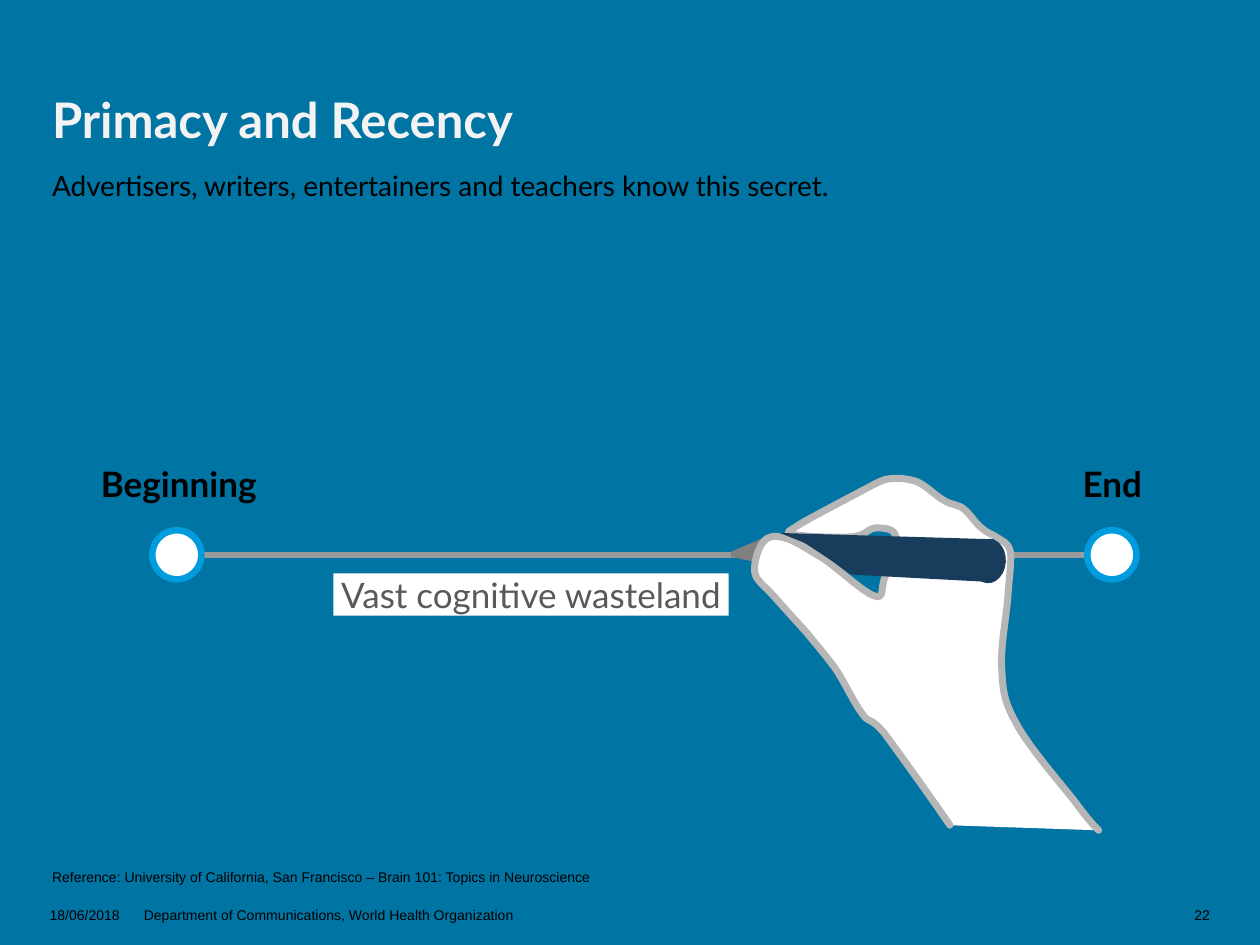
from lxml import etree
from pptx import Presentation
from pptx.dml.color import RGBColor
from pptx.enum.shapes import MSO_CONNECTOR, MSO_SHAPE
from pptx.enum.text import MSO_ANCHOR, PP_ALIGN
from pptx.oxml.ns import qn
from pptx.util import Cm, Pt

OVAL, RECT, STRAIGHT = MSO_SHAPE.OVAL, MSO_SHAPE.RECTANGLE, MSO_CONNECTOR.STRAIGHT
TOP, MIDDLE, BOTTOM = MSO_ANCHOR.TOP, MSO_ANCHOR.MIDDLE, MSO_ANCHOR.BOTTOM
LEFT, CENTER, RIGHT = PP_ALIGN.LEFT, PP_ALIGN.CENTER, PP_ALIGN.RIGHT

BLUE = RGBColor(0x00, 0x74, 0xA2)
SKY = RGBColor(0x00, 0x9C, 0xDE)
NAVY = RGBColor(0x18, 0x3C, 0x5C)
WHITE = RGBColor(0xFF, 0xFF, 0xFF)
PALE = RGBColor(0xF3, 0xF3, 0xF3)
BLACK = RGBColor(0x00, 0x00, 0x00)
TEXT_GREY = RGBColor(0x59, 0x59, 0x59)
TIP_GREY = RGBColor(0x80, 0x80, 0x80)
LINE_GREY = RGBColor(0x9B, 0x9B, 0x9B)
HAND_GREY = RGBColor(0xB6, 0xB6, 0xB6)

UNIT = Cm(0.0254)  # drawing unit of the hand and pen


def add_text(text, x, y, w, h, size=8, font="Arial", color=BLACK, bold=False,
             align=LEFT, anchor=TOP, margins=(0, 0, 0, 0), spacing=None,
             after=None, wrap=True, fill=None):
    box = Cm(x), Cm(y), Cm(w), Cm(h)
    if fill is None:
        sp = s.shapes.add_textbox(*box)
    else:
        sp = s.shapes.add_shape(RECT, *box)
        sp.shadow.inherit = False
        sp.fill.solid()
        sp.fill.fore_color.rgb = fill
        sp.line.fill.background()
    tf = sp.text_frame
    tf.word_wrap = wrap
    tf.vertical_anchor = anchor
    tf.margin_left, tf.margin_top, tf.margin_right, tf.margin_bottom = map(Cm, margins)
    p = tf.paragraphs[0]
    p.alignment = align
    p.line_spacing = spacing
    if after is not None:
        p.space_after = Pt(after)
    r = p.add_run()
    r.text = text
    r.font.size, r.font.name, r.font.bold = Pt(size), font, bold
    r.font.color.rgb = color


def add_outline(points, fill, close=True):
    fb = s.shapes.build_freeform(*points[0], scale=UNIT)
    fb.add_line_segments(points[1:], close=close)
    sp = fb.convert_to_shape()
    sp.shadow.inherit = False
    sp.fill.solid()
    sp.fill.fore_color.rgb = fill
    sp.line.fill.background()
    return sp


prs = Presentation()
prs.slide_width, prs.slide_height = Cm(25.4), Cm(19.05)
s = prs.slides.add_slide(prs.slide_layouts[6])
s.background.fill.solid()
s.background.fill.fore_color.rgb = BLUE

# Title, subtitle, reference and footer
add_text("Primacy and Recency", 1, 1.01, 17, 2, size=28, font="Lato", color=PALE,
         bold=True, anchor=BOTTOM, margins=(0.05, 0, 0, 0), spacing=0.9)
add_text("Advertisers, writers, entertainers and teachers know this secret.",
         1, 3.3, 17, 0.81, size=16, font="Lato", anchor=MIDDLE,
         margins=(0.05, 0, 0.05, 0), spacing=1.1, after=6)
add_text("Reference: University of California, San Francisco – Brain 101: Topics in Neuroscience",
         1, 17.48, 23.4, 0.58, margins=(0.05, 0, 0.05, 0), spacing=1.1, after=6)
add_text("18/06/2018", 1, 18.28, 1.65, 0.51)
add_text("Department of Communications, World Health Organization", 2.9, 18.28, 9.86, 0.51)
add_text("22", 23.78, 18.28, 0.61, 0.51, align=RIGHT)

# Timeline with its two ends
line = s.shapes.add_connector(STRAIGHT, Cm(4.06), Cm(11.19), Cm(21.92), Cm(11.19))
line.line.color.rgb = LINE_GREY
line.line.width = Pt(3.25)
etree.SubElement(line._element.spPr, qn("a:effectLst"))

for label, x, label_x, label_w in [("Beginning", 3.07, 1, 5.21),
                                   ("End", 21.92, 21.28, 2.29)]:
    sp = s.shapes.add_shape(OVAL, Cm(x), Cm(10.69), Cm(0.99), Cm(0.99))
    sp.shadow.inherit = False
    sp.fill.solid()
    sp.fill.fore_color.rgb = WHITE
    sp.line.color.rgb = SKY
    sp.line.width = Pt(3.75)
    add_text(label, label_x, 9.19, label_w, 1.32, size=20, font="Lato", bold=True,
             align=CENTER, margins=(0.25, 0.13, 0.25, 0.13))

add_text("Vast cognitive wasteland", 6.72, 11.56, 7.97, 0.85, size=20, font="Lato",
         color=TEXT_GREY, align=CENTER, margins=(0.1, 0, 0.1, 0), wrap=False, fill=WHITE)

# Pen tip
add_outline([(608, 426), (580, 438), (580, 442), (599, 446)], TIP_GREY)

# Hand: each row holds two control points and the end of a Bezier curve
HAND_START = (754, 655)
HAND_CURVES = [
    (734, 626, 713, 597, 702, 582), (690, 568, 690, 575, 684, 566),
    (678, 558, 671, 543, 664, 532), (657, 522, 649, 513, 641, 503),
    (632, 493, 621, 481, 614, 473), (607, 465, 600, 461, 599, 454),
    (598, 447, 602, 434, 606, 430), (610, 425, 615, 425, 623, 427),
    (631, 429, 641, 436, 653, 443), (665, 451, 685, 470, 694, 473),
    (702, 476, 699, 467, 702, 459), (705, 452, 712, 432, 711, 426),
    (710, 419, 701, 419, 695, 419), (689, 419, 688, 425, 677, 426),
    (666, 427, 636, 426, 629, 424), (622, 423, 626, 422, 635, 416),
    (645, 410, 674, 395, 685, 389), (697, 383, 699, 381, 706, 380),
    (713, 379, 720, 380, 727, 382), (735, 385, 743, 394, 749, 397),
    (755, 401, 760, 400, 765, 404), (770, 408, 774, 415, 779, 419),
    (783, 423, 788, 424, 792, 427), (796, 430, 800, 430, 802, 438),
    (803, 445, 801, 458, 800, 473), (799, 488, 794, 513, 795, 530),
    (796, 546, 796, 555, 806, 573), (815, 591, 842, 622, 853, 636),
    (864, 651, 868, 655, 872, 659),
]
points = [HAND_START]
for row in HAND_CURVES:
    points += zip(row[::2], row[1::2])
hand = add_outline(points, WHITE, close=False)
hand.line.color.rgb = HAND_GREY
hand.line.width = Pt(4)
ln = hand.line._get_or_add_ln()
ln.set("cap", "rnd")
etree.SubElement(ln, qn("a:round"))

# Join every three line segments of the hand into one curve
outline = next(hand._element.iter(qn("a:path")))
segments = outline.findall(qn("a:lnTo"))
for i in range(0, len(segments), 3):
    curve = etree.SubElement(outline, qn("a:cubicBezTo"))
    for segment in segments[i:i + 3]:
        curve.append(segment[0])
        outline.remove(segment)

# Pen barrel and its rounded end
add_outline([(619, 423), (789, 428), (788, 462), (675, 456), (660, 445), (639, 431)], NAVY)
end = s.shapes.add_shape(OVAL, Cm(19.6), Cm(10.88), Cm(0.66), Cm(0.86))
end.rotation = 4.3
end.shadow.inherit = False
end.fill.solid()
end.fill.fore_color.rgb = NAVY
end.line.color.rgb = NAVY
end.line.width = Pt(1)

prs.save("out.pptx")
